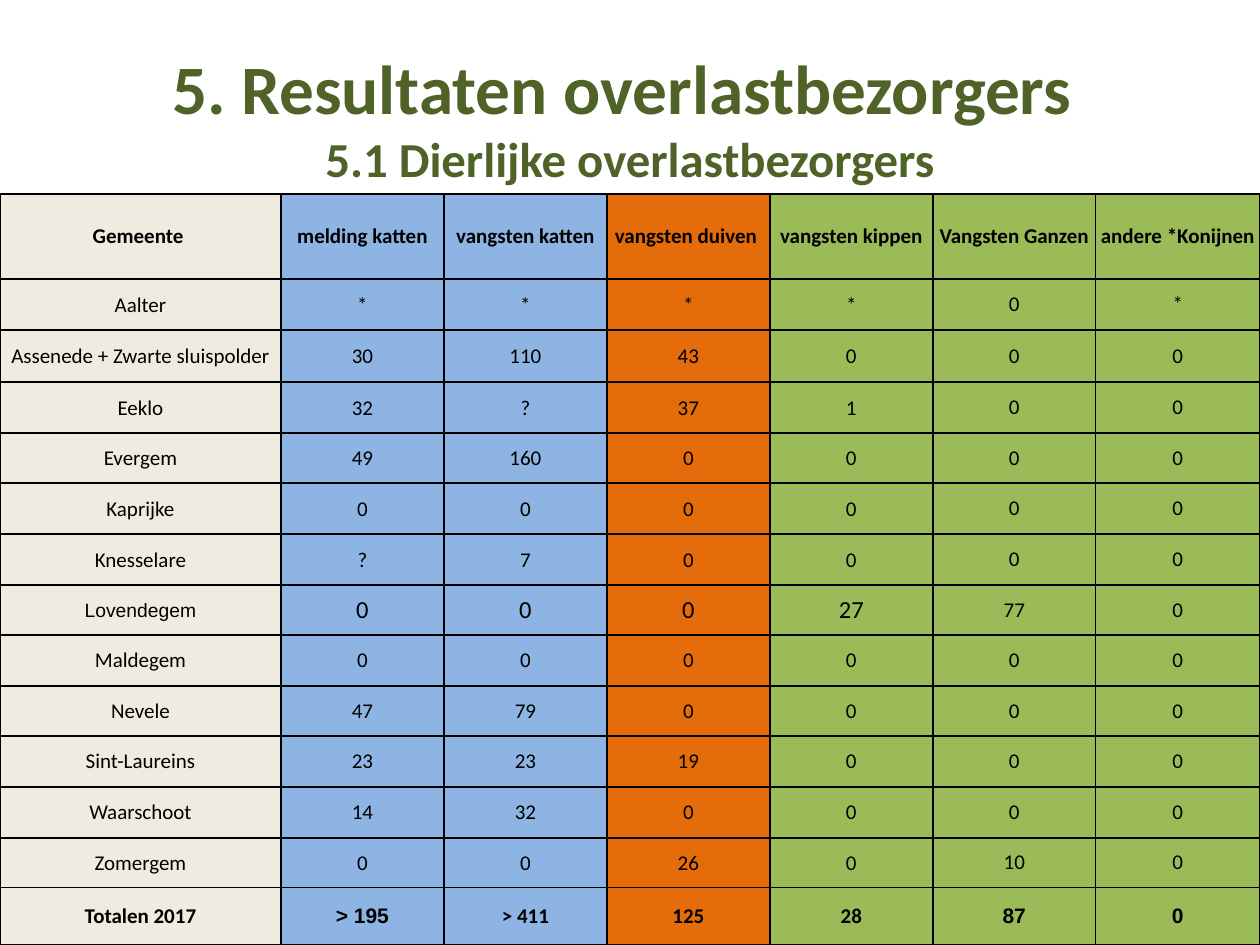
from dataclasses import dataclass
from lxml.etree import SubElement
from pptx import Presentation
from pptx.dml.color import RGBColor
from pptx.enum.text import MSO_ANCHOR, PP_ALIGN
from pptx.oxml import parse_xml
from pptx.oxml.ns import nsdecls, qn
from pptx.util import Pt

TITLE = "5. Resultaten overlastbezorgers "
SUB = "5.1 Dierlijke overlastbezorgers"
HEADS = ["Gemeente ", "melding katten", "vangsten katten", "vangsten duiven ",
         "vangsten kippen", "Vangsten Ganzen", "andere *Konijnen"]
TOWNS = [
    ("Aalter", "*", "*", "*", "*", "0", "*"),
    ("Assenede + Zwarte sluispolder", "30", "110", "43", "0", "0", "0"),
    ("Eeklo", "32", "?", "37", "1", "0", "0"),
    ("Evergem", "49", "160", "0", "0", "0", "0"),
    ("Kaprijke", "0", "0", "0", "0", "0", "0"),
    ("Knesselare", "?", "7", "0", "0", "0", "0"),
    ("Lovendegem", "0", "0", "0", "27", "77", "0"),
    ("Maldegem", "0", "0", "0", "0", "0", "0"),
    ("Nevele", "47", "79", "0", "0", "0", "0"),
    ("Sint-Laureins", "23", "23", "19", "0", "0", "0"),
    ("Waarschoot", "14", "32", "0", "0", "0", "0"),
    ("Zomergem", "0", "0", "26", "0", "0", "0"),
]
TOWNS[-1] = ("Zomergem", "0", "0", "26", "0", "10", "0")
TOTALS = ["Totalen 2017", "> 195", "> 411", "125", "28", "87", "0"]
ROWS = [HEADS, *TOWNS, TOTALS]

WIDE, HIGH = 1260, 945
COLS = [281] + [163] * 5 + [164]
TALL = [85, 51, 52] + [51, 50, 51, 51, 50] * 2 + [57]
TOP = HIGH - sum(TALL)


@dataclass(frozen=True)
class Theme:
    title: str = "4F6228"
    ink: str = "000000"
    sand: str = "EEECE1"
    blue: str = "8EB4E3"
    orange: str = "E46C0A"
    green: str = "9BBB59"
    face: str = "Calibri"
    alt: str = "Arial"
    head: float = 39.6
    sub: float = 27.9
    body: float = 12
    big: float = 14
    small: float = 11


T = Theme()
FILLS = [T.sand, T.blue, T.blue, T.orange] + [T.green] * 3
LAST = len(ROWS) - 1
LOVEN = [row[0] for row in ROWS].index("Lovendegem")
# Cells whose type differs from the table's, by (row, column)
ODD = {(LOVEN, 0): {"size": T.small, "name": T.alt}}
ODD |= {(LOVEN, c): {"size": T.big} for c in range(1, 5)}
ODD |= {(LAST, c): {"name": T.alt} for c in (1, 5, 6)}


def px(n):
    return round(n * 914400 / 126)


def put(obj, **vals):
    for key, val in vals.items():
        setattr(obj, key, val)


def style(font, size=T.body, name=T.face, bold=False, ink=T.ink):
    put(font, size=Pt(size), name=name, bold=bold)
    font.color.rgb = RGBColor.from_string(ink)


def edge(cell):
    """Draw a 1 pt line on all four sides of a cell."""
    props = cell._tc.get_or_add_tcPr()
    for i, side in enumerate(("lnL", "lnR", "lnT", "lnB")):
        line = parse_xml(f'<a:{side} {nsdecls("a")} w="{Pt(1)}"/>')
        fill = SubElement(line, qn("a:solidFill"))
        SubElement(fill, qn("a:srgbClr"), val=T.ink)
        props.insert(i, line)


def add_title(slide):
    box = slide.shapes.add_textbox(px(63), px(38), px(1134), px(TOP - 38))
    frame = box.text_frame
    put(frame, word_wrap=True, vertical_anchor=MSO_ANCHOR.MIDDLE)
    para = frame.paragraphs[0]
    para.alignment = PP_ALIGN.CENTER
    for text, size in ((TITLE, T.head), (SUB, T.sub)):
        if para.runs:
            para.add_line_break()
        run = para.add_run()
        run.text = text
        style(run.font, size, bold=True, ink=T.title)


def fill_cell(cell, text, r, c):
    edges = r == 0 or c > 4 or (r == LAST and c < 3)
    side, top = (4, 0) if edges else (1, 1)
    put(cell, margin_left=px(side), margin_right=px(side), margin_top=px(top),
        margin_bottom=0, vertical_anchor=MSO_ANCHOR.MIDDLE)
    cell.fill.solid()
    cell.fill.fore_color.rgb = RGBColor.from_string(FILLS[c])
    edge(cell)
    para = cell.text_frame.paragraphs[0]
    para.alignment = PP_ALIGN.CENTER
    run = para.add_run()
    run.text = text
    style(run.font, bold=r in (0, LAST), **ODD.get((r, c), {}))


def add_grid(slide):
    grid = slide.shapes.add_table(len(ROWS), len(COLS), 0, px(TOP),
                                  px(WIDE), px(sum(TALL))).table
    put(grid, first_row=False, horz_banding=False)
    for col, wide in zip(grid.columns, COLS):
        col.width = px(wide)
    for row, tall in zip(grid.rows, TALL):
        row.height = px(tall)
    for r, texts in enumerate(ROWS):
        for c, text in enumerate(texts):
            fill_cell(grid.cell(r, c), text, r, c)


def main():
    deck = Presentation()
    put(deck, slide_width=px(WIDE), slide_height=px(HIGH))
    slide = deck.slides.add_slide(deck.slide_layouts[6])
    add_title(slide)
    add_grid(slide)
    deck.save("out.pptx")


if __name__ == "__main__":
    main()
